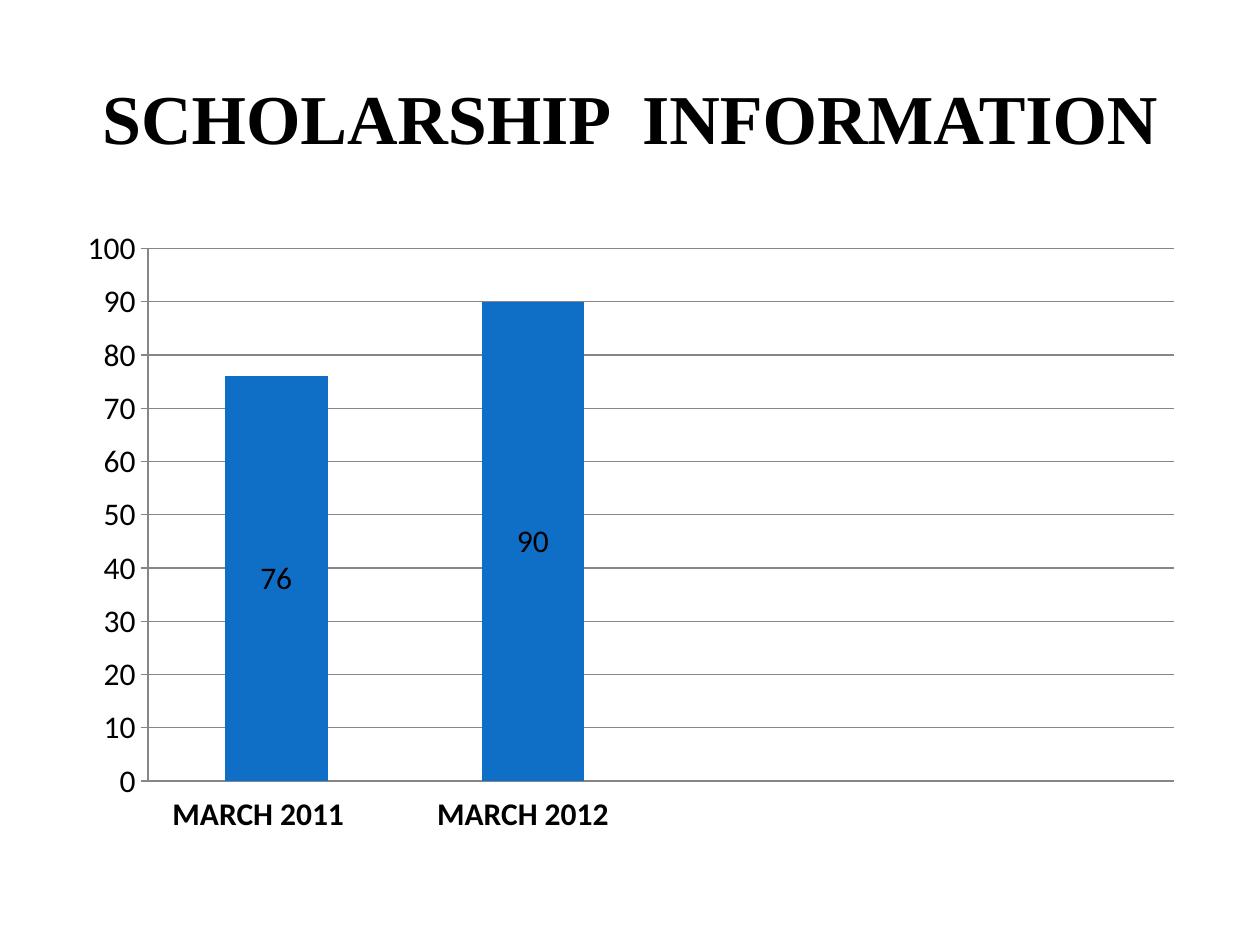
from dataclasses import dataclass

from lxml import etree
from pptx import Presentation
from pptx import util as u
from pptx.chart.data import CategoryChartData
from pptx.dml.color import RGBColor
from pptx.enum import chart as ch, text
from pptx.oxml.ns import qn


@dataclass
class Theme:
    ink: str = "000000"
    bar: str = "0F6FC6"
    rule: str = "868686"
    head_font: str = "Times New Roman"
    body_font: str = "Calibri"
    title_size: int = 40
    body_size: int = 18


def style_font(font, size, name, color, bold=False):
    font.size, font.name, font.bold = u.Pt(size), name, bold
    font.color.rgb = RGBColor.from_string(color)


def write(tf, words, **fmt):
    """Put one centred line of formatted text in a frame."""
    tf.word_wrap = True
    tf.vertical_anchor = text.MSO_ANCHOR.MIDDLE
    p = tf.paragraphs[0]
    p.alignment = text.PP_ALIGN.CENTER
    r = p.add_run()
    r.text = words
    style_font(r.font, **fmt)


class Deck:
    def __init__(self, theme):
        self.theme = theme
        self.prs = Presentation()
        self.prs.slide_width, self.prs.slide_height = u.Inches(10), u.Inches(7.5)
        self.s = self.prs.slides.add_slide(self.prs.slide_layouts[5])

    def title(self, words, *box):
        t, sp = self.theme, self.s.shapes.title
        sp.left, sp.top, sp.width, sp.height = map(u.Inches, box)
        write(sp.text_frame, words, size=t.title_size, name=t.head_font,
              color=t.ink, bold=True)

    def label(self, words, *box):
        t = self.theme
        sp = self.s.shapes.add_textbox(*map(u.Inches, box))
        write(sp.text_frame, words, size=t.body_size, name=t.body_font,
              color=t.ink, bold=True)

    def column_chart(self, cats, name, values, plot, *box):
        t = self.theme
        data = CategoryChartData()
        data.categories = cats
        data.add_series(name, values)
        chart = self.s.shapes.add_chart(
            ch.XL_CHART_TYPE.COLUMN_STACKED, *map(u.Inches, box), data).chart
        chart.has_legend = chart.has_title = False
        style_font(chart.font, t.body_size, t.body_font, t.ink)

        # Bars and their values
        bars = chart.plots[0]
        bars.gap_width, bars.overlap, bars.vary_by_categories = 150, 100, False
        fill = bars.series[0].format.fill
        fill.solid()
        fill.fore_color.rgb = RGBColor.from_string(t.bar)
        bars.has_data_labels = True
        bars.data_labels.show_value = True
        bars.data_labels.position = ch.XL_LABEL_POSITION.CENTER

        # Axes
        chart.category_axis.visible = False
        axis = chart.value_axis
        axis.minimum_scale, axis.maximum_scale, axis.major_unit = 0, 100, 10
        axis.major_tick_mark = ch.XL_TICK_MARK.OUTSIDE
        axis.has_major_gridlines = True
        for part in (axis, axis.major_gridlines):
            part.format.line.color.rgb = RGBColor.from_string(t.rule)
            part.format.line.width = u.Pt(0.75)
        self.place_plot(chart, plot)

    @staticmethod
    def place_plot(chart, plot):
        """Fix the inner plot area as fractions of the chart."""
        area = chart.plots[0]._element.getparent()
        for old in area.findall(qn("c:layout")):
            area.remove(old)
        layout = etree.Element(qn("c:layout"))
        area.insert(0, layout)
        manual = etree.SubElement(layout, qn("c:manualLayout"))
        settings = [("layoutTarget", "inner"), ("xMode", "edge"), ("yMode", "edge")]
        for tag, val in settings + list(zip("xywh", plot)):
            etree.SubElement(manual, qn("c:" + tag)).set("val", str(val))


def main():
    deck = Deck(Theme())
    deck.title("SCHOLARSHIP  INFORMATION", 0.5, 0.3, 9, 1.25)

    # Two filled slots and two empty ones
    deck.column_chart(["1", "2", "", ""], "Series 1", [76, 90, None, None],
                      (0.075, 0.045, 0.905, 0.854), 0.5, 1.75, 9, 4.95)

    # Names under the bars
    for i, month in enumerate(["MARCH 2011", "MARCH 2012"]):
        deck.label(month, 1.15 + 2.1 * i, 6.25, 1.8, 0.4)

    deck.prs.save("out.pptx")


if __name__ == "__main__":
    main()
